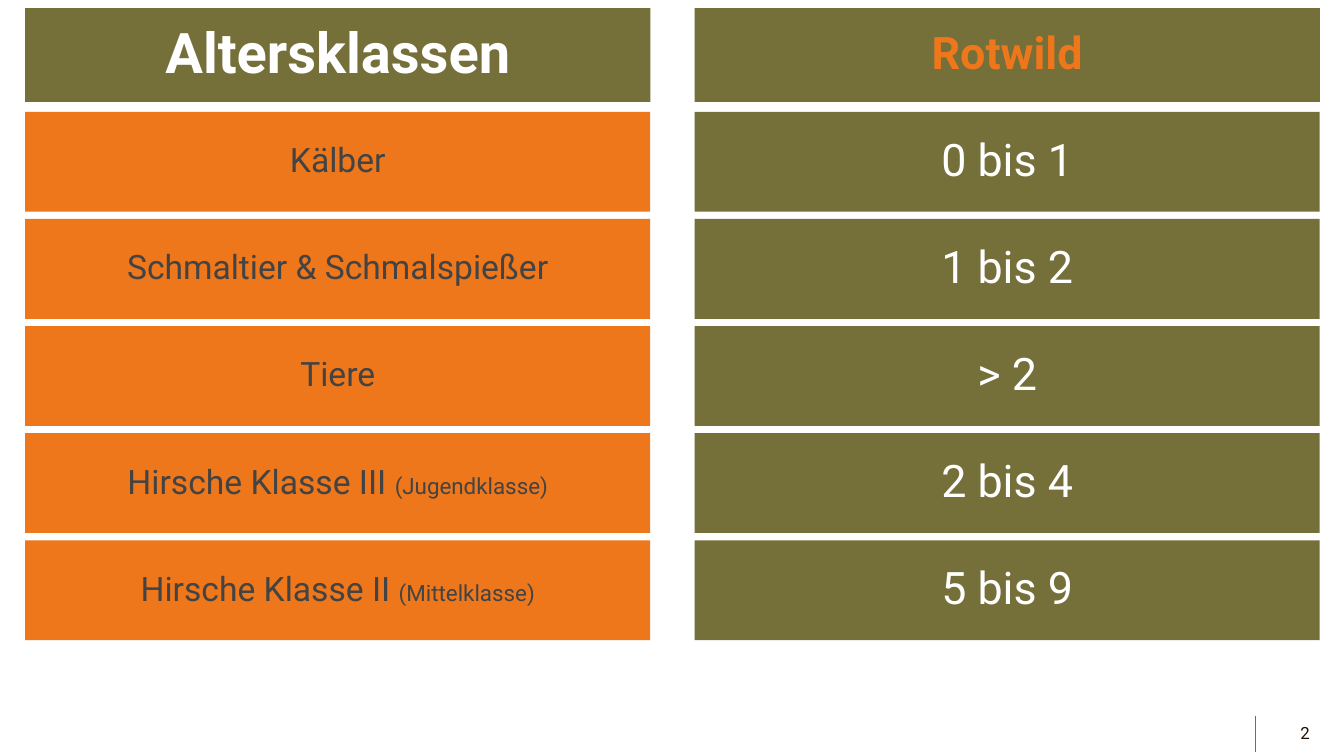
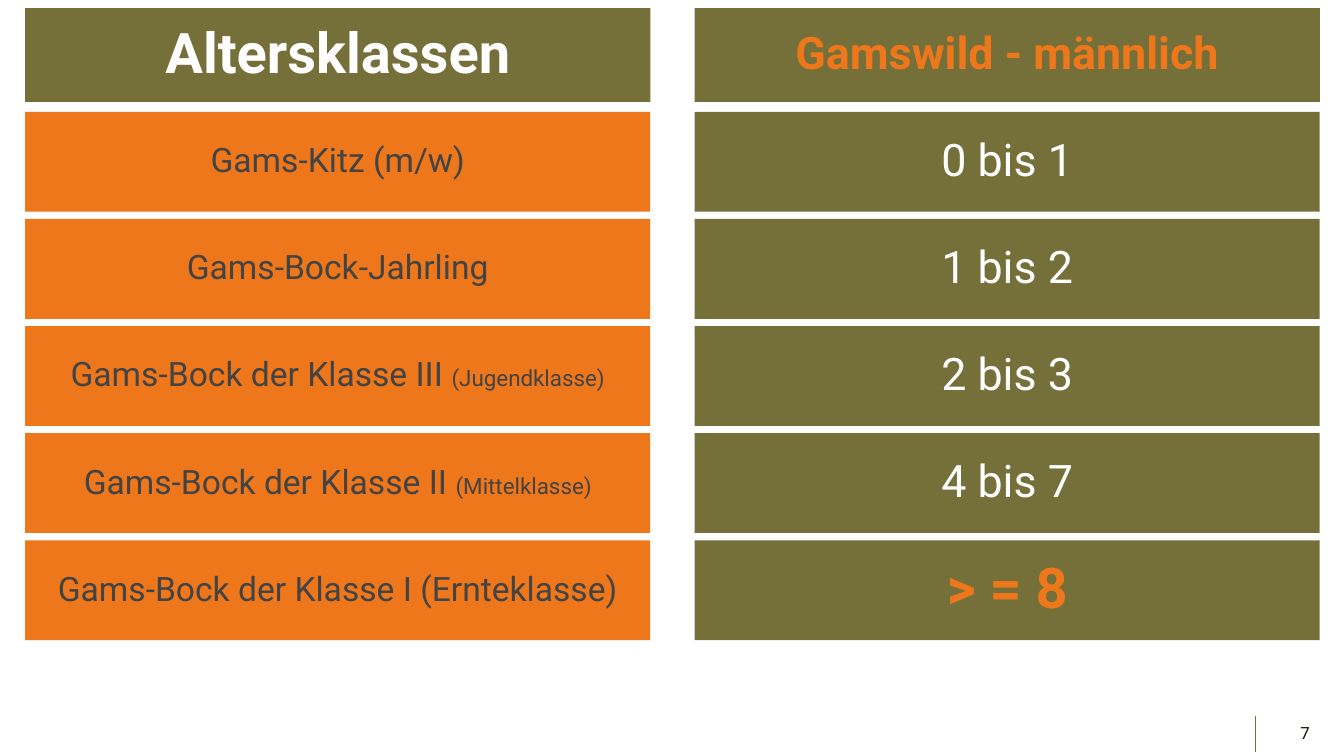
from lxml.etree import SubElement
from pptx import Presentation
from pptx.dml.color import RGBColor
from pptx.enum.shapes import MSO_CONNECTOR, MSO_SHAPE
from pptx.enum.text import MSO_ANCHOR, MSO_AUTO_SIZE, PP_ALIGN
from pptx.oxml.ns import qn
from pptx.util import Inches, Pt

INK = {
    "olive": "756F3A",
    "orange": "EE771B",
    "white": "FFFFFF",
    "grey": "434343",
    "dark": "231001",
}
FONT = "Roboto"
COLS = (0.25, 6.89)
WIDTH = 6.2
HEAD_TOP, HEAD_HIGH = 0.08, 0.93
FIRST, LAST, HIGH = 1.11, 5.36, 0.99

# Text styles: size, colour, bold
TITLE = (40, "white", True)
GAME = (32, "orange", True)
LABEL = (24, "grey", False)
AGE = (32, "white", False)
PEAK = (40, "orange", True)
PAGE = (12, "dark", False)
NOTE_SIZE = 16

SLIDES = [
    (2, "Rotwild", [
        ("Kälber", "", "0 bis 1", AGE),
        ("Schmaltier & Schmalspießer", "", "1 bis 2", AGE),
        ("Tiere", "", "> 2", AGE),
        ("Hirsche Klasse III ", "(Jugendklasse)", "2 bis 4", AGE),
        ("Hirsche Klasse II ", "(Mittelklasse)", "5 bis 9", AGE),
    ]),
    (7, "Gamswild - männlich", [
        ("Gams-Kitz (m/w)", "", "0 bis 1", AGE),
        ("Gams-Bock-Jahrling", "", "1 bis 2", AGE),
        ("Gams-Bock der Klasse III ", "(Jugendklasse)", "2 bis 3", AGE),
        ("Gams-Bock der Klasse II ", "(Mittelklasse)", "4 bis 7", AGE),
        ("Gams-Bock der Klasse I (Ernteklasse)", "", "> = 8", PEAK),
    ]),
]


def color(name):
    return RGBColor.from_string(INK[name])


def write(shape, text, style, align=PP_ALIGN.CENTER, note=""):
    """Fill a shape with one paragraph, and a smaller note after it."""
    frame = shape.text_frame
    frame.word_wrap = True
    frame.auto_size = MSO_AUTO_SIZE.NONE
    frame.vertical_anchor = MSO_ANCHOR.MIDDLE
    para = frame.paragraphs[0]
    para.add_run().text = text
    para.alignment = align
    para.line_spacing = 0.9
    para.space_before = Pt(0)
    props = para._p.get_or_add_pPr()
    props.set("marL", "0")
    props.set("indent", "0")
    SubElement(props, qn("a:buNone"))
    size, ink, bold = style
    font = para.font
    font.name, font.size, font.bold = FONT, Pt(size), bold
    font.color.rgb = color(ink)
    if note:
        run = para.add_run()
        run.text = note
        run.font.size = Pt(NOTE_SIZE)


def paint(shape, fill):
    shape.fill.solid()
    shape.fill.fore_color.rgb = color(fill)
    shape.line.fill.background()


def head(shape, col, text, style):
    """Turn a placeholder into the heading of a column."""
    shape.left, shape.top = Inches(COLS[col]), Inches(HEAD_TOP)
    shape.width, shape.height = Inches(WIDTH), Inches(HEAD_HIGH)
    paint(shape, "olive")
    write(shape, text, style)


def cell(slide, col, top, fill, text, style, note=""):
    box = slide.shapes.add_shape(
        MSO_SHAPE.RECTANGLE, Inches(COLS[col]), Inches(top),
        Inches(WIDTH), Inches(HIGH))
    box.shadow.inherit = False
    paint(box, fill)
    write(box, text, style, note=note)


def footer(slide, page):
    x = Inches(12.45)
    rule = slide.shapes.add_connector(
        MSO_CONNECTOR.STRAIGHT, x, Inches(7.1), x, Inches(7.46))
    rule.line.color.rgb = color("olive")
    rule.line.width = Pt(0.75)
    SubElement(rule._element.spPr, qn("a:effectLst"))
    box = slide.shapes.add_textbox(
        Inches(12.58), Inches(7.08), Inches(0.51), Inches(0.4))
    write(box, str(page), PAGE, PP_ALIGN.RIGHT)


def build(deck, page, game, rows):
    slide = deck.slides.add_slide(deck.slide_layouts[1])
    head(slide.shapes.title, 0, "Altersklassen", TITLE)
    head(slide.placeholders[1], 1, game, GAME)
    step = (LAST - FIRST) / (len(rows) - 1)
    for i, (label, note, age, style) in enumerate(rows):
        top = FIRST + i * step
        cell(slide, 0, top, "orange", label, LABEL, note)
        cell(slide, 1, top, "olive", age, style)
    footer(slide, page)


def main():
    deck = Presentation()
    deck.slide_width, deck.slide_height = Inches(13.33), Inches(7.5)
    for page, game, rows in SLIDES:
        build(deck, page, game, rows)
    deck.save("out.pptx")


if __name__ == "__main__":
    main()
